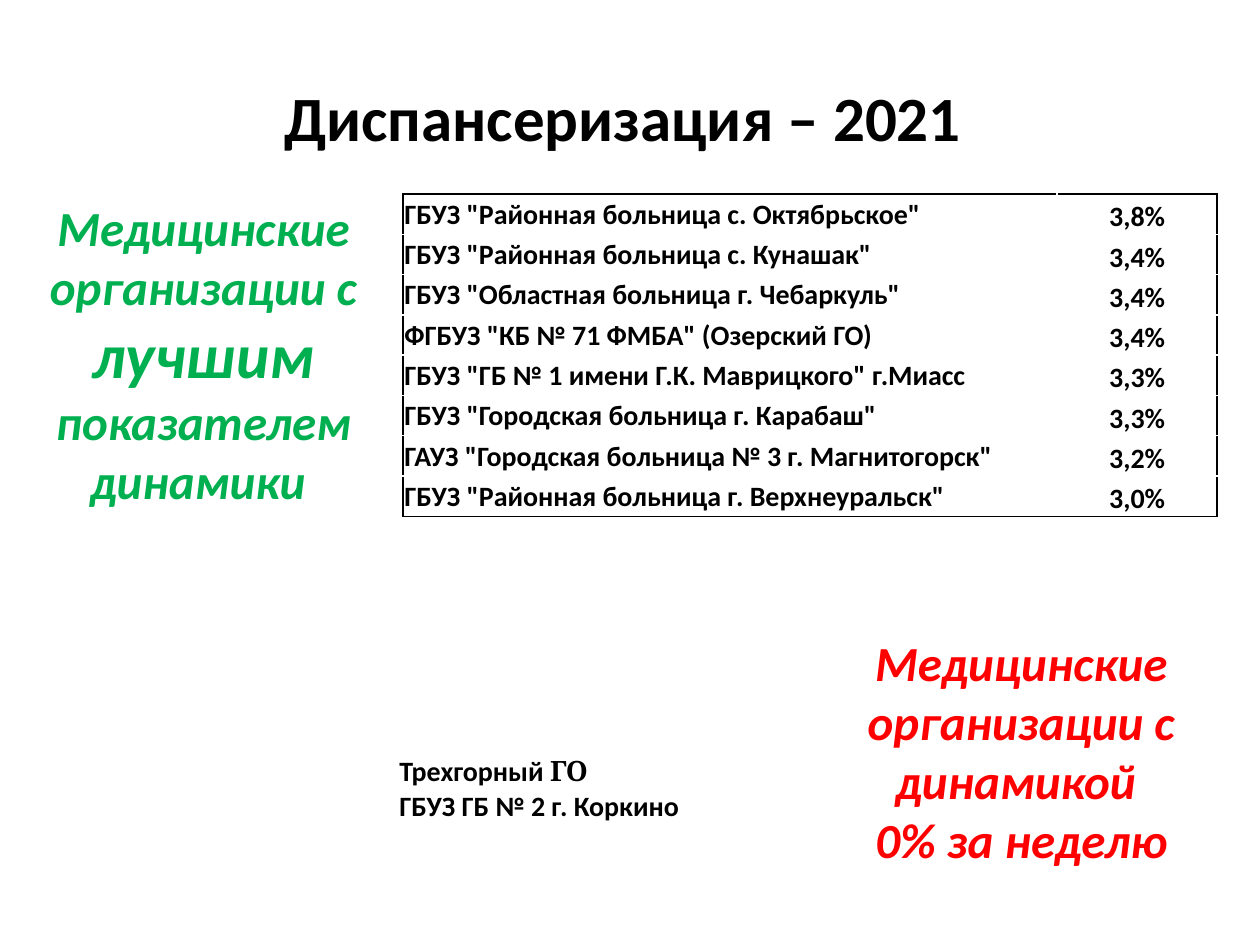
from lxml import etree
from pptx import Presentation, util as u
from pptx.dml.color import RGBColor
from pptx.enum import text
from pptx.oxml import ns

BLACK, GREEN, RED, WHITE = "000000", "00B050", "FF0000", "FFFFFF"
MID, LOW = text.MSO_ANCHOR.MIDDLE, text.MSO_ANCHOR.BOTTOM
LEFT, CENTER = text.PP_ALIGN.LEFT, text.PP_ALIGN.CENTER


def tint(code):
    return RGBColor.from_string(code)


class Deck:
    """Holds the text style and the current slide, and adds elements to it."""

    def __init__(self, font="Calibri"):
        self.font = font
        self.show = Presentation()
        self.show.slide_width, self.show.slide_height = u.Inches(10), u.Inches(7.5)
        self.page = self.show.slides.add_slide(self.show.slide_layouts[6])

    def fill(self, frame, paras, color, align, slant=False):
        frame.word_wrap = True
        for i, runs in enumerate(paras):
            para = frame.add_paragraph() if i else frame.paragraphs[0]
            para.alignment = align
            for words, size, *face in runs:
                run = para.add_run()
                run.text = words
                font = run.font
                font.name = face[0] if face else self.font
                font.size = u.Pt(size)
                font.bold, font.italic = True, slant
                font.color.rgb = tint(color)

    def label(self, box, paras, color, slant=False):
        frame = self.page.shapes.add_textbox(*map(u.Inches, box)).text_frame
        self.fill(frame, paras, color, CENTER, slant)
        frame.vertical_anchor = MID

    def edge(self, cell, sides, color):
        props = cell._tc.get_or_add_tcPr()
        for side in sides:
            line = etree.SubElement(props, ns.qn("a:ln" + side), w=str(u.Pt(1)))
            solid = etree.SubElement(line, ns.qn("a:solidFill"))
            etree.SubElement(solid, ns.qn("a:srgbClr"), val=color)

    def grid(self, spot, cols, high, rows, color):
        size = (sum(cols), high * len(rows))
        table = self.page.shapes.add_table(
            len(rows), len(cols), *map(u.Inches, spot + size)).table
        table.first_row = table.horz_banding = False
        for col, wide in zip(table.columns, cols):
            col.width = u.Inches(wide)
        end, side = len(rows) - 1, len(cols) - 1
        for r, row in enumerate(rows):
            table.rows[r].height = u.Inches(high)
            for c, runs in enumerate(row):
                cell = table.cell(r, c)
                cell.margin_left = cell.margin_right = cell.margin_top = u.Inches(0.01)
                cell.margin_bottom = 0
                cell.vertical_anchor = LOW if c else MID
                self.fill(cell.text_frame, [runs], BLACK, CENTER if c else LEFT)
                outer = {"L": c == 0, "R": c == side, "T": r == 0, "B": r == end}
                self.edge(cell, [s for s, on in outer.items() if on], color)
                cell.fill.background()


def main():
    deck = Deck()
    deck.label((0.5, 0.3, 9, 1.25), [[("Диспансеризация – 2021 ", 36)]], BLACK)
    deck.label((0.2, 1.15, 2.83, 3.31), [[
        ("Медицинские организации с ", 28),
        ("лучшим ", 36),
        ("показателем динамики ", 28)]], GREEN, True)
    best = [
        ('ГБУЗ "Районная больница с. Октябрьское"', "3,8%"),
        ('ГБУЗ "Районная больница с. Кунашак"', "3,4%"),
        ('ГБУЗ "Областная больница г. Чебаркуль"', "3,4%"),
        ('ФГБУЗ "КБ № 71 ФМБА" (Озерский ГО)', "3,4%"),
        ('ГБУЗ "ГБ № 1 имени Г.К. Маврицкого" г.Миасс', "3,3%"),
        ('ГБУЗ "Городская больница г. Карабаш"', "3,3%"),
        ('ГАУЗ "Городская больница № 3 г. Магнитогорск"', "3,2%"),
        ('ГБУЗ "Районная больница г. Верхнеуральск"', "3,0%"),
    ]
    rows = [[[(words, 16)] for words in row] for row in best]
    deck.grid((3.2, 1.54), (5.19, 1.27), 0.32, rows, BLACK)
    deck.label((6.69, 4.41, 2.83, 3.09), [
        [("Медицинские организации с динамикой ", 28)],
        [("0% за неделю", 28)]], RED, True)
    zero = [[[("Трехгорный ", 16), ("ГО", 16, "Cambria")]],
            [[("ГБУЗ ГБ № 2 г. Коркино", 16)]]]
    deck.grid((3.16, 5.98), (3.68,), 0.21, zero, WHITE)
    deck.show.save("out.pptx")


if __name__ == "__main__":
    main()
